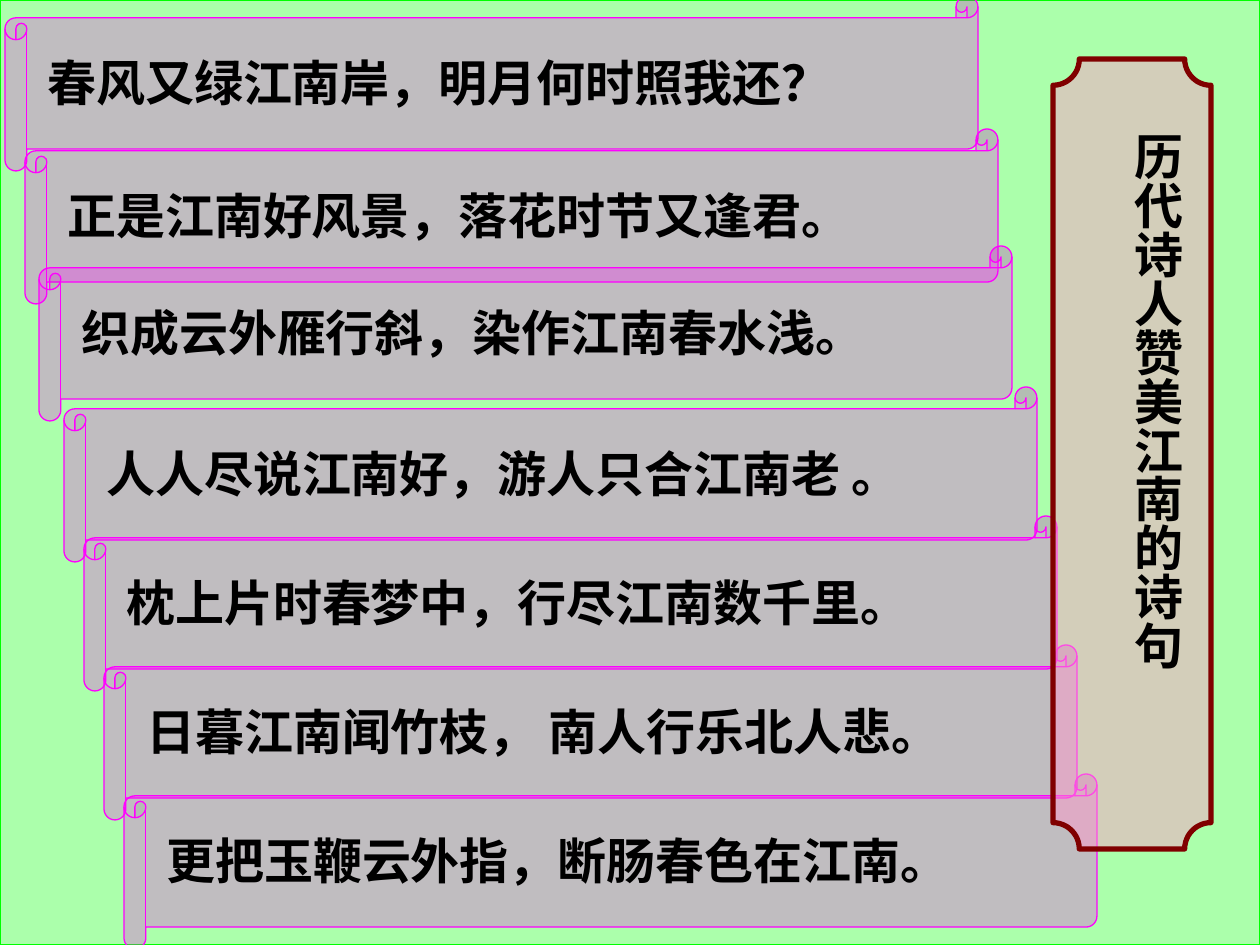
from lxml.etree import SubElement
from pptx import Presentation
from pptx.dml.color import RGBColor
from pptx.enum.shapes import MSO_SHAPE as SHAPE
from pptx.oxml.ns import qn
from pptx.util import Emu, Pt

PX = 914400 / 126
FONT = {"name": "Calibri", "size": Pt(28), "bold": True}


def paint(fmt, color, alpha=None):
    fmt.solid()
    fmt.fore_color.rgb = RGBColor.from_string(color)
    if alpha is not None:
        clr = fmt._xPr.find(qn("a:solidFill"))[0]
        SubElement(clr, qn("a:alpha")).set("val", str(alpha * 1000))


def add(shapes, box, kind=None, fill=None, line=None, text=None):
    box = [Emu(round(v * PX)) for v in box]
    if kind is None:
        sp = shapes.add_textbox(*box)
        tf = sp.text_frame
        tf.word_wrap = True
        r = tf.paragraphs[0].add_run()
        r.text = text
        for key, value in FONT.items():
            setattr(r.font, key, value)
        paint(r.font.fill, "000000")
        return sp
    sp = shapes.add_shape(kind, *box)
    sp.shadow.inherit = False
    paint(sp.fill, *fill)
    paint(sp.line.fill, line[0])
    sp.line.width = Pt(line[1])
    return sp


prs = Presentation()
prs.slide_width = Emu(round(1260 * PX))
prs.slide_height = Emu(round(945 * PX))
s = prs.slides.add_slide(prs.slide_layouts[6])

add(s.shapes, (0, 0, 1260, 945), SHAPE.RECTANGLE, ("00FF00", 33), ("00FF00", 0.75))

verses = [
    (5, -4, "春风又绿江南岸，明月何时照我还？"),
    (25, 129, "正是江南好风景，落花时节又逢君。"),
    (39, 246, "织成云外雁行斜，染作江南春水浅。"),
    (64, 387, "人人尽说江南好，游人只合江南老 。"),
    (84, 516, "枕上片时春梦中，行尽江南数千里。"),
    (104, 645, "日暮江南闻竹枝， 南人行乐北人悲。"),
    (124, 774, "更把玉鞭云外指，断肠春色在江南。"),
]
for x, y, verse in verses:
    group = s.shapes.add_group_shape().shapes
    add(group, (x, y, 973, 175), SHAPE.HORIZONTAL_SCROLL, ("FF00FF", 26), ("FF00FF", 0.75))
    add(group, (x + 30, y + 50, 995, 72), text=verse)

group = s.shapes.add_group_shape().shapes
add(group, (1053, 59, 158, 790), SHAPE.PLAQUE, ("FF99CC", 48), ("800000", 3))
title = add(group, (1094, 120, 99, 649), text="历代诗人赞美江南的诗句")
title.element.txBody.find(qn("a:bodyPr")).set("vert", "eaVert")

prs.save("out.pptx")
